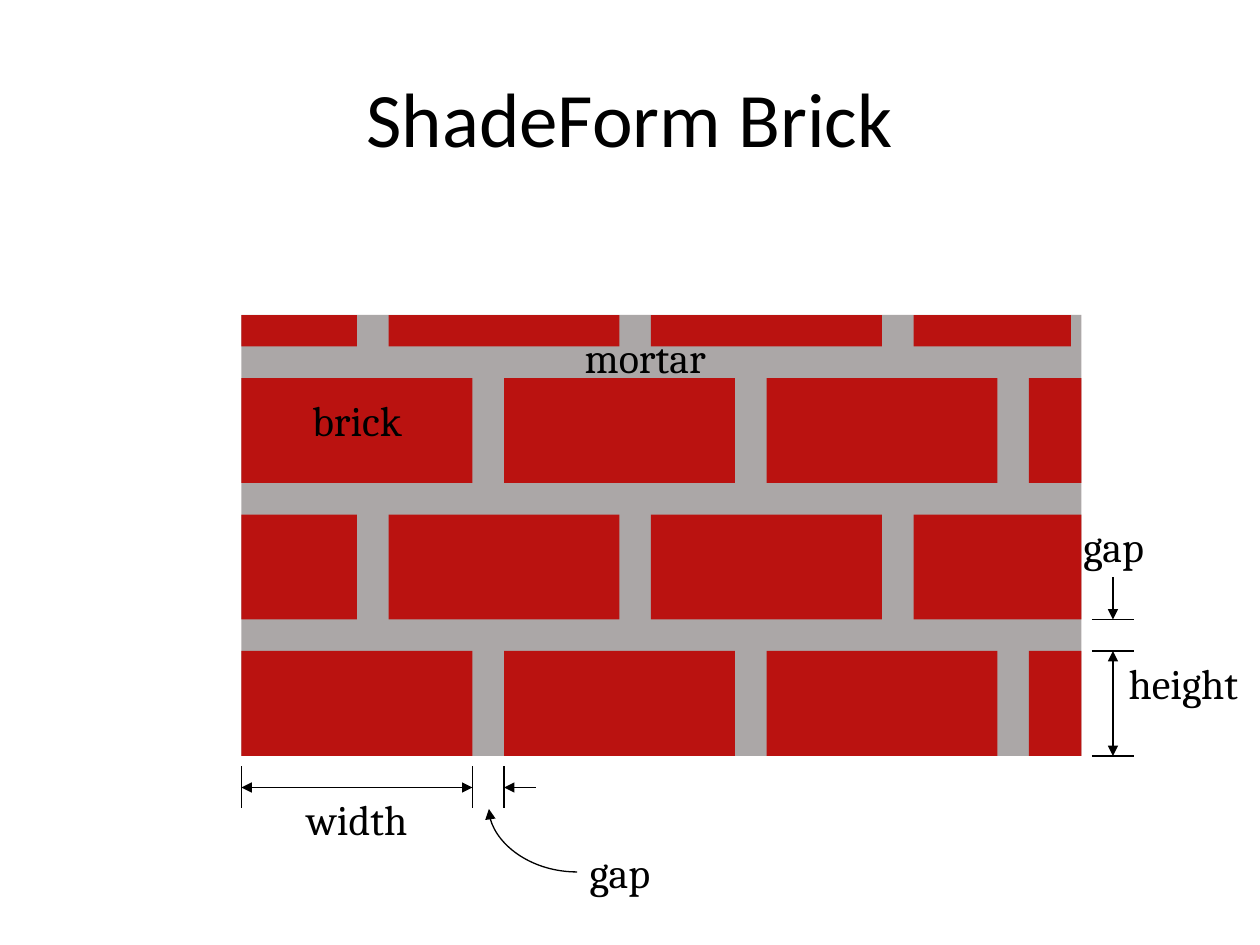
from lxml import etree
from pptx import Presentation
from pptx.dml.color import RGBColor
from pptx.enum.shapes import MSO_CONNECTOR, MSO_SHAPE
from pptx.enum.text import MSO_ANCHOR, PP_ALIGN
from pptx.oxml.ns import qn
from pptx.util import Inches, Pt

STRAIGHT, CURVE = MSO_CONNECTOR.STRAIGHT, MSO_CONNECTOR.CURVE
RECTANGLE = MSO_SHAPE.RECTANGLE
LEFT, CENTER = PP_ALIGN.LEFT, PP_ALIGN.CENTER
TOP, MIDDLE = MSO_ANCHOR.TOP, MSO_ANCHOR.MIDDLE

BLACK = RGBColor(0x00, 0x00, 0x00)
BRICK_RED = RGBColor(0xBA, 0x12, 0x10)
MORTAR_GRAY = RGBColor(0xAB, 0xA7, 0xA7)

# The wall is laid out on a grid of twelfths of an inch.
UNIT = 1 / 12
WALL_LEFT, WALL_TOP = 23 * UNIT, 30 * UNIT
WALL_WIDTH, WALL_HEIGHT = 80 * UNIT, 42 * UNIT
WALL_RIGHT, WALL_BOTTOM = WALL_LEFT + WALL_WIDTH, WALL_TOP + WALL_HEIGHT
BRICK_WIDTH, BRICK_HEIGHT, GAP = 22 * UNIT, 10 * UNIT, 3 * UNIT
ROWS, COLUMNS = 4, 4


class Diagram:
    def __init__(self, slide):
        self.slide = slide
        self.font = "Cambria"
        self.size = 24
        self.line_width = Pt(0.75)

    def rectangle(self, left, top, width, height, color):
        shape = self.slide.shapes.add_shape(
            RECTANGLE, Inches(left), Inches(top), Inches(width), Inches(height))
        shape.shadow.inherit = False
        shape.fill.solid()
        shape.fill.fore_color.rgb = color
        shape.line.fill.background()

    def line(self, start, end, head=False, tail=False, kind=STRAIGHT):
        """Draw a connector; head and tail put an arrowhead at start and end."""
        connector = self.slide.shapes.add_connector(
            kind, *(Inches(value) for value in (*start, *end)))
        connector.line.color.rgb = BLACK
        connector.line.width = self.line_width
        outline = connector.line._get_or_add_ln()
        for tag, wanted in (("a:headEnd", head), ("a:tailEnd", tail)):
            if wanted:
                etree.SubElement(outline, qn(tag), type="triangle")
        etree.SubElement(connector._element.spPr, qn("a:effectLst"))
        return connector

    def quarter_curve(self, corner, opposite):
        """Draw an arrow that leaves the opposite corner sideways and ends at corner."""
        properties = self.line(corner, opposite, tail=True, kind=CURVE)._element.spPr
        properties.find(qn("a:prstGeom")).set("prst", "curvedConnector2")
        properties.find(qn("a:xfrm")).set("rot", "10800000")

    def text(self, text, left, top, width, height=0.5, align=CENTER,
             anchor=TOP, wrap=True, font=None, size=None):
        box = self.slide.shapes.add_textbox(
            Inches(left), Inches(top), Inches(width), Inches(height))
        frame = box.text_frame
        frame.word_wrap = wrap
        frame.vertical_anchor = anchor
        frame.text = text
        paragraph = frame.paragraphs[0]
        paragraph.alignment = align
        run_font = paragraph.runs[0].font
        run_font.name = font or self.font
        run_font.size = Pt(size or self.size)
        run_font.color.rgb = BLACK


def draw_wall(diagram):
    """Lay rows from the bottom up, shifting every other one by half a brick."""
    diagram.rectangle(WALL_LEFT, WALL_TOP, WALL_WIDTH, WALL_HEIGHT, MORTAR_GRAY)
    for row in range(ROWS):
        bottom = WALL_BOTTOM - row * (BRICK_HEIGHT + GAP)
        top = max(bottom - BRICK_HEIGHT, WALL_TOP)
        shift = row % 2 * BRICK_WIDTH / 2
        row_right = WALL_RIGHT - (UNIT if row == ROWS - 1 else 0)
        for column in range(COLUMNS):
            start = WALL_LEFT - shift + column * (BRICK_WIDTH + GAP)
            left = max(start, WALL_LEFT)
            right = min(start + BRICK_WIDTH, row_right)
            diagram.rectangle(left, top, right - left, bottom - top, BRICK_RED)


def draw_dimensions(diagram):
    brick_right = WALL_LEFT + BRICK_WIDTH
    next_brick = brick_right + GAP
    y = WALL_BOTTOM + GAP
    diagram.line((WALL_LEFT, y), (brick_right, y), head=True, tail=True)
    diagram.line((next_brick + GAP, y), (next_brick, y), tail=True)
    for x in (WALL_LEFT, brick_right, next_brick):
        diagram.line((x, y - 2 * UNIT), (x, y + 2 * UNIT))
    diagram.text("width", WALL_LEFT, y, BRICK_WIDTH)
    diagram.text("gap", 4.58, 6.67, 0.68, wrap=False)
    diagram.quarter_curve((3.88, 6.42), (4.58, 6.92))

    brick_top = WALL_BOTTOM - BRICK_HEIGHT
    gap_top = brick_top - GAP
    x = WALL_RIGHT + GAP
    for tick in (gap_top, brick_top, WALL_BOTTOM):
        diagram.line((x - 2 * UNIT, tick), (x + 2 * UNIT, tick))
    diagram.line((x, brick_top), (x, WALL_BOTTOM), head=True, tail=True)
    diagram.line((x, gap_top - 4 * UNIT), (x, gap_top), tail=True)
    diagram.text("height", 8.86, brick_top, 1.14, align=LEFT)
    diagram.text("gap", 8.5, 4.08, 1.25, align=LEFT)


def main():
    presentation = Presentation()
    presentation.slide_width = Inches(10)
    presentation.slide_height = Inches(7.5)
    slide = presentation.slides.add_slide(presentation.slide_layouts[6])
    diagram = Diagram(slide)
    draw_wall(diagram)
    draw_dimensions(diagram)
    diagram.text("brick", WALL_LEFT, 3.08, BRICK_WIDTH)
    diagram.text("mortar", 4.33, 2.58, 1.58)
    diagram.text("ShadeForm Brick", 0.5, 0.3, 9, 1.25, anchor=MIDDLE,
                 font="Calibri", size=44)
    presentation.save("out.pptx")


if __name__ == "__main__":
    main()
